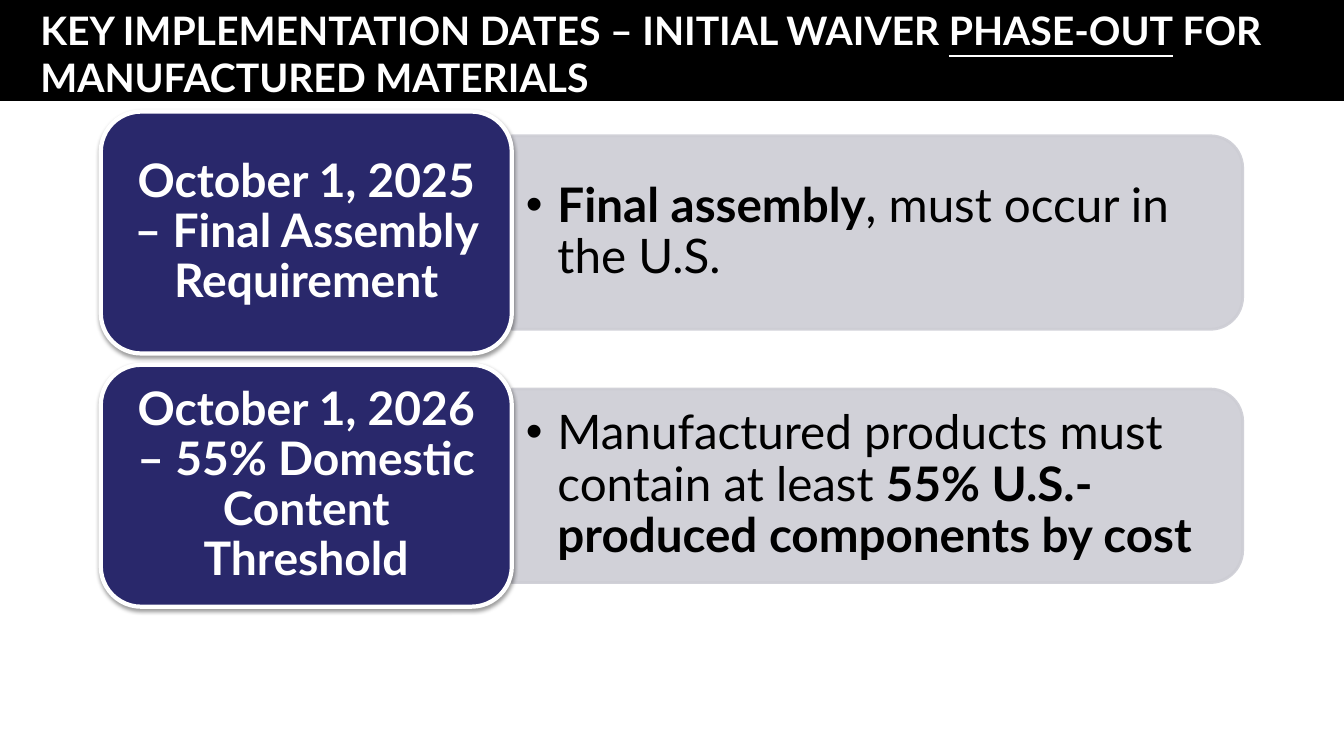
import dataclasses

import lxml.etree
import pptx
import pptx.dml.color
import pptx.enum.shapes
import pptx.enum.text
import pptx.oxml.ns
import pptx.util

Pt = pptx.util.Pt
qn = pptx.oxml.ns.qn
ALIGN = pptx.enum.text.PP_ALIGN
ANCHOR = pptx.enum.text.MSO_ANCHOR
SHAPE = pptx.enum.shapes.MSO_SHAPE


@dataclasses.dataclass(frozen=True)
class Theme:
    font: str = "Lato"
    black: str = "000000"
    white: str = "FFFFFF"
    navy: str = "29286B"
    grey: str = "CDCDD4"
    title_size: float = 28
    card_size: float = 33
    detail_size: float = 34


THEME = Theme()
TWO_CONTENT_LAYOUT = 3

# Row geometry in points
FIRST_ROW_CENTRE, ROW_PITCH = 166.1, 180.9
CARD_LEFT, CARD_WIDTH, CARD_HEIGHT = 72, 293.6, 172.8
PANEL_LEFT, PANEL_WIDTH, PANEL_HEIGHT = 365.6, 522, 138.2
DETAIL_WIDTH, DETAIL_HEIGHT = 515.5, 124.6
BULLET_INDENT = 22.5
TEXT_MARGINS = (10.1, 5, 10.1, 5)

TITLE_RUNS = [
    ("KEY IMPLEMENTATION DATES – INITIAL WAIVER ", {"bold": True}),
    ("PHASE-OUT", {"bold": True, "underline": True}),
    (" FOR MANUFACTURED MATERIALS", {"bold": True}),
]
MILESTONES = [
    ("October 1, 2025 – Final Assembly Requirement",
     [("Final assembly", {"bold": True}),
      (", must occur in the U.S.", {"bold": False})]),
    ("October 1, 2026 – 55% Domestic Content Threshold",
     [("Manufactured products must contain at least ", {"bold": False}),
      ("55% U.S.-produced components by cost", {"bold": True})]),
]


def rgb(value):
    return pptx.dml.color.RGBColor.from_string(value)


def apply(target, formats):
    for name, value in formats.items():
        setattr(target, name, value)


def place(shape, left, top, width, height):
    apply(shape, {"left": Pt(left), "top": Pt(top),
                  "width": Pt(width), "height": Pt(height)})


def write_text(shape, runs, size, color, margins, anchor, paragraph_format):
    frame = shape.text_frame
    sides = ("margin_left", "margin_top", "margin_right", "margin_bottom")
    apply(frame, {side: Pt(margin) for side, margin in zip(sides, margins)})
    apply(frame, {"word_wrap": True, "vertical_anchor": anchor,
                  "auto_size": pptx.enum.text.MSO_AUTO_SIZE.NONE})
    paragraph = frame.paragraphs[0]
    apply(paragraph, {"space_before": Pt(0), **paragraph_format})
    for text, run_format in runs:
        run = paragraph.add_run()
        run.text = text
        apply(run.font, {"name": THEME.font, "size": Pt(size), **run_format})
        run.font.color.rgb = rgb(color)
    return paragraph


def add_block(slide, kind, box, fill, line, line_width):
    shape = slide.shapes.add_shape(kind, *(Pt(length) for length in box))
    shape.fill.solid()
    shape.fill.fore_color.rgb = rgb(fill)
    shape.line.color.rgb = rgb(line)
    shape.line.width = Pt(line_width)
    shape.shadow.inherit = False
    return shape


def set_opacity(color_element, percent):
    alpha = lxml.etree.SubElement(color_element, qn("a:alpha"))
    alpha.set("val", str(percent * 1000))


def add_drop_shadow(shape):
    effects = shape.element.spPr.find(qn("a:effectLst"))
    shadow = lxml.etree.SubElement(effects, qn("a:outerShdw"))
    for name, value in {"blurRad": Pt(3.1), "dist": Pt(1.6),
                        "dir": 90 * 60000, "rotWithShape": 0}.items():
        shadow.set(name, str(int(value)))
    color = lxml.etree.SubElement(shadow, qn("a:srgbClr"), val=THEME.black)
    set_opacity(color, 38)


def fill_title(title, slide_width):
    place(title, 0, 0, slide_width, 72)
    title.fill.solid()
    title.fill.fore_color.rgb = rgb(THEME.black)
    write_text(title, TITLE_RUNS, THEME.title_size, THEME.white,
               (28.8, 7.2, 28.8, 0), ANCHOR.BOTTOM, {"alignment": ALIGN.LEFT})


def add_panel(slide, centre):
    # The panel is turned a quarter, so its width and height swap
    left = PANEL_LEFT + (PANEL_WIDTH - PANEL_HEIGHT) / 2
    box = (left, centre - PANEL_WIDTH / 2, PANEL_HEIGHT, PANEL_WIDTH)
    panel = add_block(slide, SHAPE.ROUND_2_SAME_RECTANGLE, box,
                      THEME.grey, THEME.grey, 2)
    panel.rotation = 90
    for color in panel.element.spPr.iter(qn("a:srgbClr")):
        set_opacity(color, 90)
    return panel


def fill_detail(body, runs, centre):
    place(body, PANEL_LEFT, centre - DETAIL_HEIGHT / 2,
          DETAIL_WIDTH, DETAIL_HEIGHT)
    paragraph = write_text(body, runs, THEME.detail_size, THEME.black,
                           TEXT_MARGINS, ANCHOR.MIDDLE,
                           {"alignment": ALIGN.LEFT, "line_spacing": 0.9})
    properties = paragraph._p.get_or_add_pPr()
    properties.set("marL", str(Pt(BULLET_INDENT)))
    properties.set("indent", str(-Pt(BULLET_INDENT)))


def add_card(slide, text, centre):
    box = (CARD_LEFT, centre - CARD_HEIGHT / 2, CARD_WIDTH, CARD_HEIGHT)
    card = add_block(slide, SHAPE.ROUNDED_RECTANGLE, box,
                     THEME.navy, THEME.white, 3)
    add_drop_shadow(card)
    write_text(card, [(text, {"bold": True})], THEME.card_size, THEME.white,
               TEXT_MARGINS, ANCHOR.MIDDLE,
               {"alignment": ALIGN.CENTER, "line_spacing": 0.9})


def main():
    presentation = pptx.Presentation()
    presentation.slide_width, presentation.slide_height = Pt(960), Pt(540)
    layout = presentation.slide_layouts[TWO_CONTENT_LAYOUT]
    slide = presentation.slides.add_slide(layout)

    # Title band
    fill_title(slide.shapes.title, 960)

    # One row per milestone: panel behind its list, card on top
    for row, (heading, detail_runs) in enumerate(MILESTONES):
        centre = FIRST_ROW_CENTRE + row * ROW_PITCH
        body = slide.placeholders[row + 1]
        panel = add_panel(slide, centre)
        body.element.addprevious(panel.element)
        fill_detail(body, detail_runs, centre)
        add_card(slide, heading, centre)

    presentation.save("out.pptx")


if __name__ == "__main__":
    main()
